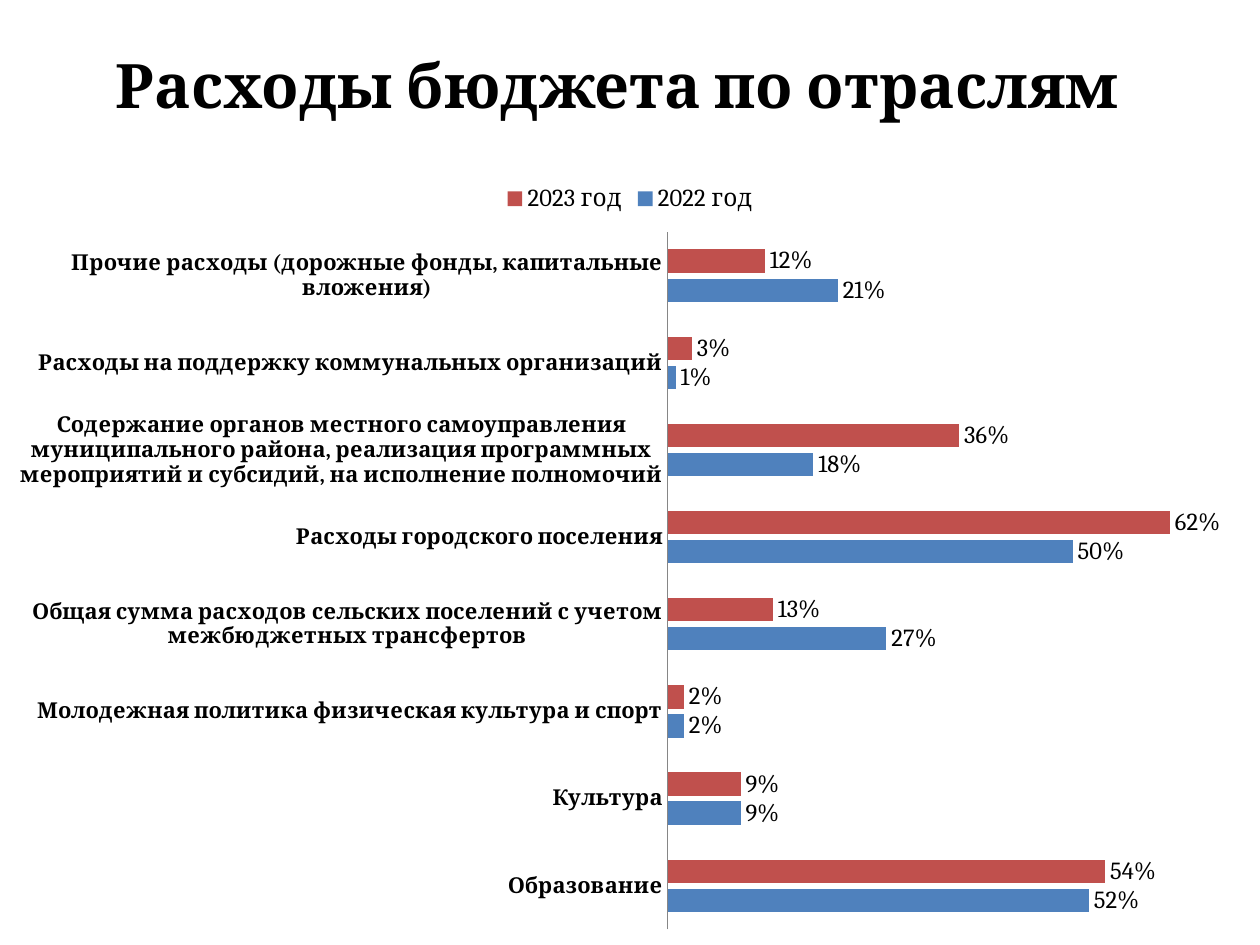
from dataclasses import dataclass

from lxml import etree
from pptx import Presentation
from pptx.chart.data import CategoryChartData
from pptx.dml.color import RGBColor
from pptx.enum import chart as ch, text
from pptx.oxml import parse_xml
from pptx.oxml.ns import nsdecls, qn
from pptx.util import Inches, Pt

SERIF = "Cambria"
PERCENT = "0%"
WIDTH, HEIGHT = Inches(10), Inches(7.5)


@dataclass(frozen=True)
class Sector:
    name: str
    share_2022: float
    share_2023: float


@dataclass(frozen=True)
class Area:
    """A rectangle given as shares of its container."""
    x: float
    y: float
    w: float
    h: float

    def on_slide(self) -> tuple[int, int, int, int]:
        return (int(self.x * WIDTH), int(self.y * HEIGHT),
                int(self.w * WIDTH), int(self.h * HEIGHT))


SECTORS = [
    Sector("Образование", 0.52, 0.54),
    Sector("Культура", 0.09, 0.09),
    Sector("Молодежная политика физическая культура и спорт", 0.02, 0.02),
    Sector("Общая сумма расходов сельских поселений с учетом "
           "межбюджетных трансфертов", 0.27, 0.13),
    Sector("Расходы городского поселения", 0.50, 0.62),
    Sector("Содержание органов местного самоуправления муниципального района, "
           "реализация программных мероприятий и субсидий, "
           "на исполнение полномочий", 0.18, 0.36),
    Sector("Расходы на поддержку коммунальных организаций", 0.01, 0.03),
    Sector("Прочие расходы (дорожные фонды, капитальные вложения)", 0.21, 0.12),
]
SERIES_COLORS = ["4F81BD", "C0504D"]
TITLE_AREA = Area(0, 0.05, 0.98, 0.13)
CHART_AREA = Area(0, 0.18, 1, 0.82)
PLOT_AREA = Area(0.53, 0.08, 0.45, 0.9)


def rgb(color: str) -> RGBColor:
    return RGBColor.from_string(color)


def style(font, size: float, bold: bool = False) -> None:
    font.name, font.size, font.bold = SERIF, Pt(size), bold
    font.color.rgb = rgb("000000")


def add_title(slide, title: str) -> None:
    sp = slide.shapes.title
    sp.left, sp.top, sp.width, sp.height = TITLE_AREA.on_slide()
    tf = sp.text_frame
    tf.margin_left = tf.margin_right = tf.margin_top = tf.margin_bottom = 0
    tf.vertical_anchor = text.MSO_ANCHOR.TOP
    p = tf.paragraphs[0]
    p.text = title
    p.alignment = text.PP_ALIGN.CENTER
    style(p.font, 35, bold=True)


def set_plot_layout(chart, area: Area) -> None:
    """Fix the inner plot rectangle, leaving room for long category names."""
    plot_area = chart.plots[0]._element.getparent()
    for old in plot_area.findall(qn("c:layout")):
        plot_area.remove(old)
    layout = parse_xml(f"<c:layout {nsdecls('c')}><c:manualLayout/></c:layout>")
    settings = {"layoutTarget": "inner", "xMode": "edge", "yMode": "edge",
                "x": area.x, "y": area.y, "w": area.w, "h": area.h}
    for tag, value in settings.items():
        etree.SubElement(layout[0], qn(f"c:{tag}")).set("val", str(value))
    plot_area.insert(0, layout)


def add_spending_chart(slide, sectors: list[Sector]) -> None:
    data = CategoryChartData(number_format=PERCENT)
    data.categories = [s.name for s in sectors]
    data.add_series("2022 год", [s.share_2022 for s in sectors])
    data.add_series("2023 год", [s.share_2023 for s in sectors])
    chart = slide.shapes.add_chart(
        ch.XL_CHART_TYPE.BAR_CLUSTERED, *CHART_AREA.on_slide(), data).chart
    chart.has_title = False
    chart.font.name, chart.font.size = "Calibri", Pt(10)

    chart.has_legend = True
    chart.legend.position = ch.XL_LEGEND_POSITION.TOP
    chart.legend.include_in_layout = False
    style(chart.legend.font, 14)

    names = chart.category_axis
    names.major_tick_mark = ch.XL_TICK_MARK.NONE
    names.format.line.color.rgb = rgb("868686")
    style(names.tick_labels.font, 12.5, bold=True)

    shares = chart.value_axis
    shares.minimum_scale, shares.maximum_scale = 0, 0.7
    shares.has_major_gridlines = False
    shares.tick_labels.number_format = PERCENT
    shares.tick_labels.number_format_is_linked = False
    shares.visible = False

    plot = chart.plots[0]
    plot.gap_width, plot.overlap = 150, -25
    plot.vary_by_categories = False
    for series, color in zip(plot.series, SERIES_COLORS):
        series.format.fill.solid()
        series.format.fill.fore_color.rgb = rgb(color)
        labels = series.data_labels
        labels.show_value = True
        labels.number_format = PERCENT
        labels.number_format_is_linked = False
        labels.position = ch.XL_LABEL_POSITION.OUTSIDE_END
        style(labels.font, 14)
    set_plot_layout(chart, PLOT_AREA)


def main() -> None:
    prs = Presentation()
    prs.slide_width, prs.slide_height = WIDTH, HEIGHT
    slide = prs.slides.add_slide(prs.slide_layouts.get_by_name("Title Only"))
    add_title(slide, "Расходы бюджета по отраслям")
    add_spending_chart(slide, SECTORS)
    prs.save("out.pptx")


if __name__ == "__main__":
    main()
